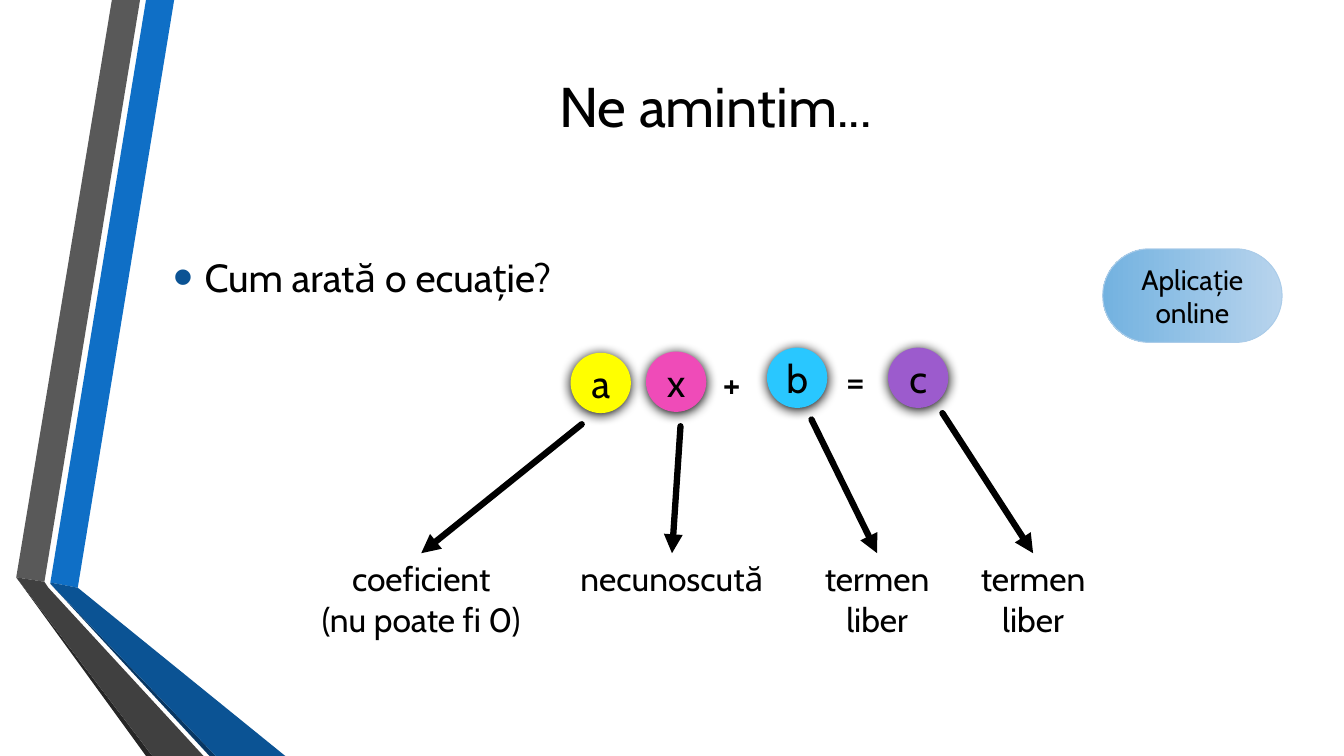
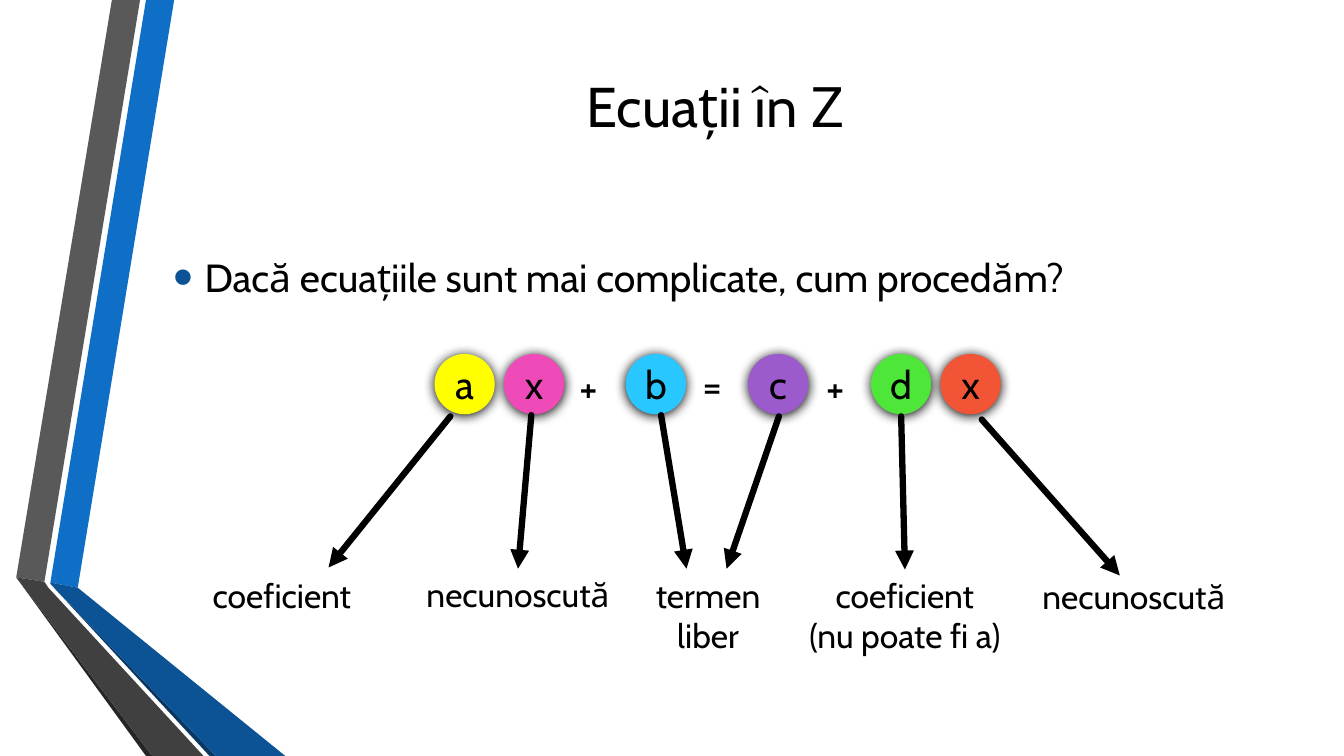
import lxml.etree
import pptx
import pptx.dml.color
import pptx.enum.shapes
import pptx.enum.text
import pptx.oxml.ns
import pptx.util

Cm, Pt = pptx.util.Cm, pptx.util.Pt
CENTER = pptx.enum.text.PP_ALIGN.CENTER
LEFT = pptx.enum.text.PP_ALIGN.LEFT
MIDDLE = pptx.enum.text.MSO_ANCHOR.MIDDLE
TOP = pptx.enum.text.MSO_ANCHOR.TOP
SHAPES = pptx.enum.shapes.MSO_SHAPE

COLORS = {
    "text": "000000", "bullet": "0B5394",
    "blue": "0F6FC6", "deep blue": "0B5394", "navy": "083763",
    "gray": "595959", "dark gray": "404040", "charcoal": "262626",
    "yellow": "FFFF00", "pink": "EF4BB8", "cyan": "29C7FF",
    "purple": "9C5BCD", "green": "4EE739", "orange": "F25536",
    "pill start": "B8D4ED", "pill end": "73B2E0", "pill line": "ABCCE9",
}

# Side ribbon: colour and corner points in cm
BANDS = [
    ("blue", [(1.27, 14.68), (1.96, 14.81), (4.39, 0), (3.68, 0)]),
    ("gray", [(3.53, 0), (2.82, 0), (0.41, 14.55), (1.12, 14.66)]),
    ("charcoal", [(0.41, 14.55), (3.68, 19.05), (3.84, 19.05)]),
    ("navy", [(1.27, 14.71), (5.28, 19.05), (5.44, 19.05)]),
    ("deep blue", [(1.27, 14.68), (1.27, 14.71), (5.44, 19.05), (7.19, 19.05),
                   (1.96, 14.81)]),
    ("dark gray", [(5.13, 19.05), (1.22, 14.81), (1.12, 14.66), (0.41, 14.55),
                   (3.84, 19.05)]),
]

BALL = 1.52
WIDE, NARROW = 5.99, 3.63
ONE_LINE, TWO_LINES = 1.27, 2.31


def color(name):
    return pptx.dml.color.RGBColor.from_string(COLORS[name])


def assign(target, values):
    for name, value in values.items():
        setattr(target, name, value)


def add_xml(parent, tag, **attributes):
    child = lxml.etree.SubElement(parent, pptx.oxml.ns.qn(tag))
    for name, value in attributes.items():
        child.set(name, str(value))
    return child


class EquationDeck:
    """Holds the shared style and the page being drawn."""

    def __init__(self):
        self.deck = pptx.Presentation()
        assign(self.deck, {"slide_width": Cm(33.87), "slide_height": Cm(19.05)})
        self.layout = self.deck.slide_layouts[1]
        self.font = "Cabin"
        self.page = None

    def add_page(self, title, question):
        first = self.page is None
        self.page = self.deck.slides.add_slide(self.layout)
        if first:
            self.add_bands()
        self.add_title(title)
        self.add_question(question)

    def add_bands(self):
        """Draws the ribbon and hands it to the layout, so all pages show it."""
        tree = self.layout.element.cSld.spTree
        for position, (name, points) in enumerate(BANDS, start=2):
            corners = [(Cm(x), Cm(y)) for x, y in points]
            builder = self.page.shapes.build_freeform(*corners[0])
            builder.add_line_segments(corners[1:], close=True)
            band = builder.convert_to_shape()
            self.paint(band, name)
            tree.insert(position, band.element)

    def paint(self, shape, name):
        shape.fill.solid()
        shape.fill.fore_color.rgb = color(name)
        shape.line.fill.background()
        shape.shadow.inherit = False

    def add_span(self, para, text, size, align=CENTER, font=None):
        para.alignment = align
        span = para.add_run()
        span.text = text
        assign(span.font, {"size": Pt(size), "name": font or self.font})
        span.font.color.rgb = color("text")

    def place(self, shape, left, top, width, height):
        assign(shape, {"left": Cm(left), "top": Cm(top),
                       "width": Cm(width), "height": Cm(height)})

    def add_title(self, spans):
        title = self.page.shapes.title
        self.place(title, 4.11, 0.84, 27.84, 3.61)
        title.text_frame.vertical_anchor = MIDDLE
        for text, font in spans:
            self.add_span(title.text_frame.paragraphs[0], text, 40, font=font)

    def add_question(self, text):
        body = self.page.placeholders[1]
        self.place(body, 4.11, 5.97, 27.84, 11.58)
        body.text_frame.vertical_anchor = TOP
        para = body.text_frame.paragraphs[0]
        self.add_span(para, text, 28, LEFT)
        assign(para, {"line_spacing": 1.25, "space_before": Pt(6),
                      "space_after": Pt(6)})
        bullet = para._p.get_or_add_pPr()
        bullet.set("marL", str(Cm(0.79)))
        bullet.set("indent", str(-Cm(0.79)))
        add_xml(add_xml(bullet, "a:buClr"), "a:srgbClr", val=COLORS["bullet"])
        add_xml(bullet, "a:buSzPct", val=145000)
        add_xml(bullet, "a:buFont", typeface="Arial")
        add_xml(bullet, "a:buChar", char="•")

    def add_ball(self, letter, name, left, top):
        ball = self.page.shapes.add_shape(
            SHAPES.OVAL, Cm(left), Cm(top), Cm(BALL), Cm(BALL))
        self.paint(ball, name)
        effects = ball.element.spPr.find(pptx.oxml.ns.qn("a:effectLst"))
        glow = add_xml(effects, "a:outerShdw", blurRad=int(Pt(8.5)),
                       dist=int(Pt(1)), dir=5400000, algn="ctr", rotWithShape=0)
        add_xml(glow, "a:srgbClr", val=COLORS["text"])
        self.add_span(ball.text_frame.paragraphs[0], letter, 28)

    def add_text(self, lines, left, top, width, height, size, align, wrap):
        box = self.page.shapes.add_textbox(
            Cm(left), Cm(top), Cm(width), Cm(height))
        frame = box.text_frame
        assign(frame, {"word_wrap": wrap, "auto_size":
                       pptx.enum.text.MSO_AUTO_SIZE.SHAPE_TO_FIT_TEXT})
        for index, line in enumerate(lines):
            para = frame.add_paragraph() if index else frame.paragraphs[0]
            self.add_span(para, line, size, align)
        return box

    def add_operator(self, sign, left, top):
        self.add_text([sign], left, top, 1.24, 1.45, 28, LEFT, False)

    def add_label(self, lines, left, top, width, height):
        return self.add_text(lines, left, top, width, height, 24, CENTER, True)

    def add_arrow(self, start, end, label=None):
        arrow = self.page.shapes.add_connector(
            pptx.enum.shapes.MSO_CONNECTOR.STRAIGHT,
            *[Cm(value) for value in start + end])
        if label is not None:
            arrow.end_connect(label, 0)
        arrow.line.width = Pt(4.5)
        arrow.line.color.rgb = color("text")
        line = arrow.get_or_add_ln()
        line.set("cap", "rnd")
        add_xml(line, "a:round")
        add_xml(line, "a:tailEnd", type="triangle")
        add_xml(arrow.element.spPr, "a:effectLst")

    def add_pill(self, text, left, top, width, height):
        pill = self.page.shapes.add_shape(
            SHAPES.ROUNDED_RECTANGLE, Cm(left), Cm(top), Cm(width), Cm(height))
        pill.adjustments[0] = 0.5
        pill.shadow.inherit = False
        pill.fill.gradient()
        pill.fill.gradient_angle = 180
        for stop, name in zip(pill.fill.gradient_stops, ("pill start", "pill end")):
            stop.color.rgb = color(name)
        pill.line.width = Pt(0.75)
        pill.line.color.rgb = color("pill line")
        self.add_span(pill.text_frame.paragraphs[0], text, 20)

    def add_equation(self, balls, operators, labels, arrows):
        """Arrows are (start, end, label index or None to stay unjoined)."""
        for ball in balls:
            self.add_ball(*ball)
        for operator in operators:
            self.add_operator(*operator)
        boxes = [self.add_label(*label) for label in labels]
        for start, end, index in arrows:
            self.add_arrow(start, end, None if index is None else boxes[index])


def main():
    show = EquationDeck()

    # Simple equation
    show.add_page([("Ne amintim...", None)], "Cum arată o ecuație?")
    show.add_equation(
        balls=[("a", "yellow", 14.38, 8.89), ("x", "pink", 16.28, 8.86),
               ("b", "cyan", 19.33, 8.76), ("c", "purple", 22.38, 8.76)],
        operators=[("+", 17.96, 8.92), ("=", 21.06, 8.86)],
        labels=[(["coeficient", "(nu poate fi 0)"], 7.62, 13.94, WIDE, TWO_LINES),
                (["necunoscută"], 13.94, 13.94, WIDE, ONE_LINE),
                (["termen liber"], 20.29, 13.94, NARROW, TWO_LINES),
                (["termen liber"], 24.28, 13.94, 3.51, TWO_LINES)],
        arrows=[((14.66, 10.69), (10.62, 13.94), 0),
                ((17.15, 10.74), (16.94, 13.94), 1),
                ((20.45, 10.57), (22.12, 13.94), 2),
                ((23.75, 10.41), (26.04, 13.94), 3)])
    show.add_pill("Aplicație online", 27.79, 6.27, 4.52, 2.36)

    # Equation with the unknown on both sides
    show.add_page([("Ecuații în ", None), ("Z", "Roboto")],
                  "Dacă ecuațiile sunt mai complicate, cum procedăm?")
    row = 8.92
    show.add_equation(
        balls=[("a", "yellow", 10.95, row), ("x", "pink", 12.7, row),
               ("b", "cyan", 15.77, row), ("c", "purple", 18.85, row),
               ("d", "green", 21.95, row), ("x", "orange", 23.7, row)],
        operators=[("+", 14.35, 9.02), ("=", 17.45, 8.97), ("+", 20.57, 9.02)],
        labels=[(["coeficient"], 4.11, 14.35, WIDE, ONE_LINE),
                (["necunoscută"], 10.06, 14.33, WIDE, ONE_LINE),
                (["termen liber"], 16.03, 14.35, NARROW, TWO_LINES),
                (["coeficient", "(nu poate fi a)"], 19.81, 14.35, WIDE, TWO_LINES),
                (["necunoscută"], 25.58, 14.38, WIDE, ONE_LINE)],
        arrows=[((11.35, 10.49), (8.28, 14.3), None),
                ((13.39, 10.46), (13.06, 14.33), 1),
                ((16.66, 10.46), (17.3, 14.33), None),
                ((19.63, 10.49), (18.31, 14.33), None),
                ((22.71, 10.49), (22.81, 14.35), 3),
                ((24.74, 10.57), (28.22, 14.5), None)])

    show.deck.save("out.pptx")


if __name__ == "__main__":
    main()
